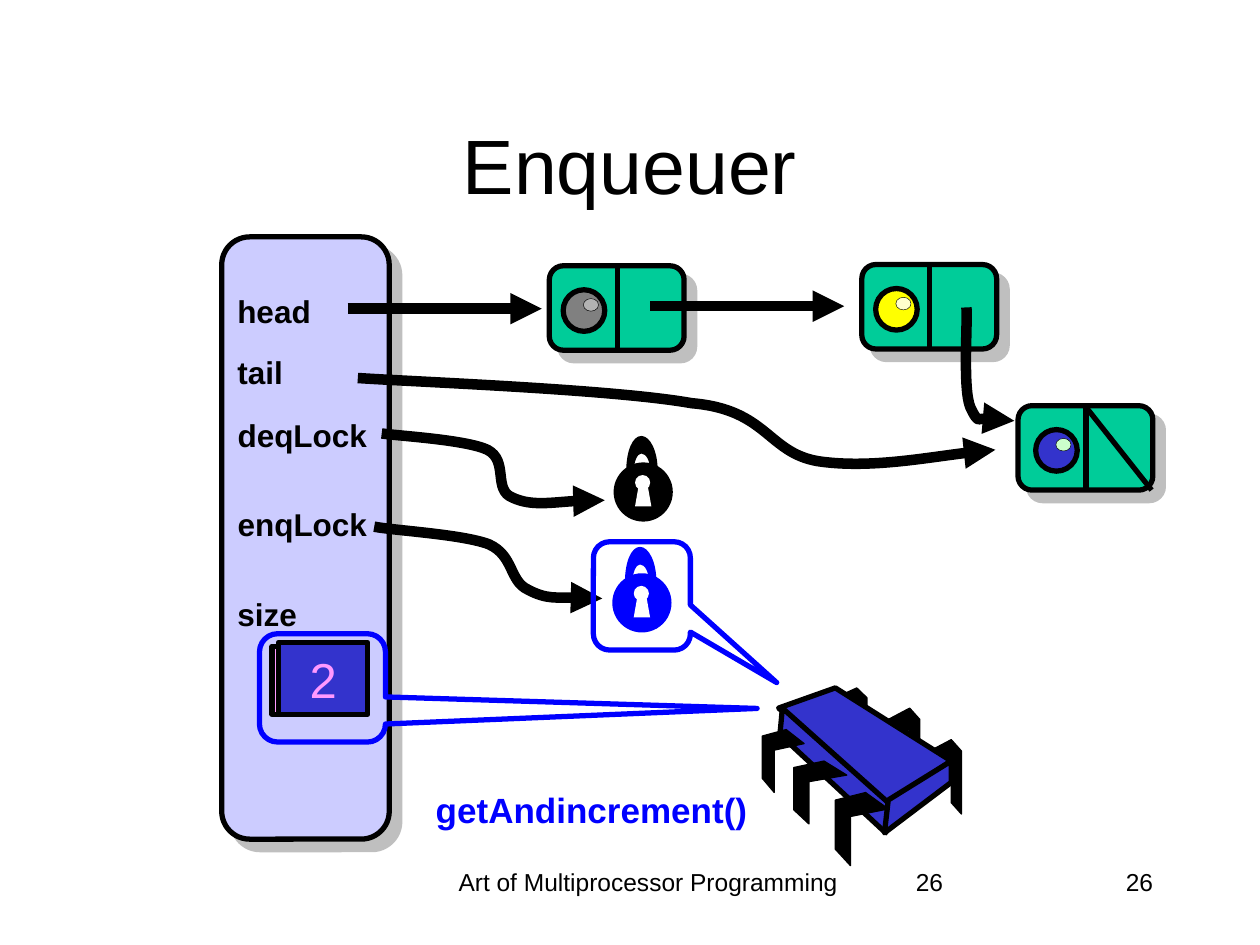
from lxml.etree import SubElement
from pptx import Presentation
from pptx.dml.color import RGBColor
from pptx.enum.shapes import MSO_CONNECTOR as Connector, MSO_SHAPE as Shape
from pptx.enum.text import MSO_ANCHOR as Anchor, PP_ALIGN as Align
from pptx.oxml.ns import qn
from pptx.util import Inches, Pt

BLACK, WHITE, BLUE = "000000", "FFFFFF", "0000FF"
NAVY, GREEN, LILAC, PINK = "3333CC", "00CC99", "CCCCFF", "FF99FF"


def colour(value):
    return RGBColor.from_string(value)


class Sketch:
    """Draws queue-diagram elements on one slide in one style."""

    font = "Arial"
    thin, outline, arrow_width = 0.75, 3, 6

    def __init__(self, page):
        self.page = page
        self.canvas = page.shapes

    def start_group(self):
        self.canvas = self.page.shapes.add_group_shape().shapes

    def end_group(self):
        self.canvas = self.page.shapes

    def paint(self, item, fill, line, width):
        item.shadow.inherit = False
        if fill:
            item.fill.solid()
            item.fill.fore_color.rgb = colour(fill)
        else:
            item.fill.background()
        if line:
            item.line.color.rgb = colour(line)
            item.line.width = Pt(width)
        else:
            item.line.fill.background()

    def drop_shadow(self, item):
        effects = item._element.spPr.find(qn("a:effectLst"))
        shadow = SubElement(effects, qn("a:outerShdw"), dist=str(Pt(8.5)),
                            dir=str(45 * 60000), algn="ctr", rotWithShape="0")
        shade = SubElement(shadow, qn("a:srgbClr"), val="808080")
        SubElement(shade, qn("a:alpha"), val="50000")

    def arrowhead(self, item):
        line = item.line._get_or_add_ln()
        SubElement(line, qn("a:tailEnd"), type="triangle")

    def label(self, item, words, size, ink, bold=False, align=Align.CENTER,
              anchor=Anchor.TOP, wrap=False):
        frame = item.text_frame
        frame.word_wrap = wrap
        frame.vertical_anchor = anchor
        paragraph = frame.paragraphs[0]
        paragraph.text = words
        paragraph.alignment = align
        font = paragraph.font
        font.name, font.size, font.bold = self.font, Pt(size), bold
        font.color.rgb = colour(ink)

    def text(self, words, left, top, width, height, size, ink=BLACK, **style):
        box = self.canvas.add_textbox(*map(Inches, (left, top, width, height)))
        self.label(box, words, size, ink, **style)

    def shape(self, kind, left, top, width, height, fill=None, line=BLACK,
              weight=outline):
        item = self.canvas.add_shape(kind, *map(Inches, (left, top, width, height)))
        self.paint(item, fill, line, weight)
        return item

    def line(self, start, end, width=outline):
        item = self.canvas.add_connector(Connector.STRAIGHT, *map(Inches, start + end))
        item.line.color.rgb = colour(BLACK)
        item.line.width = Pt(width)
        SubElement(item._element.spPr, qn("a:effectLst"))
        return item

    def arrow(self, start, end):
        self.arrowhead(self.line(start, end, self.arrow_width))

    def outline_of(self, start, steps, fill=None, line=None, width=outline,
                   close=True, left=0, top=0):
        """A step of two numbers is a straight line, one of six a Bezier curve."""
        def place(x, y):
            return Inches(left + x), Inches(top + y)

        builder = self.canvas.build_freeform(*place(*start))
        builder.add_line_segments(
            [place(*step[i:i + 2]) for step in steps for i in range(0, len(step), 2)],
            close=close)
        item = builder.convert_to_shape()
        segments = iter(list(item._element.iter(qn("a:lnTo"))))
        for step in steps:
            segment = next(segments)
            if len(step) == 6:
                curve = segment.makeelement(qn("a:cubicBezTo"))
                segment.addprevious(curve)
                for part in (segment, next(segments), next(segments)):
                    curve.append(part[0])
                    part.getparent().remove(part)
        self.paint(item, fill, line, width)
        return item

    def curved_arrow(self, start, *steps):
        self.arrowhead(self.outline_of(start, steps, line=BLACK,
                                       width=self.arrow_width, close=False))

    def panel(self, left, top, width, height, fill):
        self.drop_shadow(self.shape(Shape.ROUNDED_RECTANGLE, left, top,
                                    width, height, fill))

    def node(self, left, top, ball, shine, ball_left=0.11):
        self.start_group()
        self.panel(left, top, 1.07, 0.67, GREEN)
        self.line((left + 0.54, top), (left + 0.54, top + 0.67))
        x, y = left + ball_left, top + 0.19
        self.shape(Shape.OVAL, x, y, 0.33, 0.33, ball)
        self.shape(Shape.OVAL, x + 0.16, y + 0.07, 0.12, 0.1, shine, weight=0.25)
        self.end_group()

    def lock(self, left, top, ink):
        self.start_group()
        self.shape(Shape.OVAL, left, top, 0.47, 0.47, ink, None)
        self.shape(Shape.OVAL, left + 0.17, top + 0.1, 0.12, 0.12, WHITE, None)
        self.outline_of((0.17, 0.35), [(0.2, 0.18), (0.27, 0.18), (0.3, 0.35)],
                        WHITE, left=left, top=top)
        shackle = [(0.16, -0.01, 0.19, -0.07, 0.22, -0.07),
                   (0.26, -0.07, 0.29, -0.01, 0.29, 0.07), (0.35, 0.07),
                   (0.35, -0.09, 0.29, -0.21, 0.22, -0.21),
                   (0.15, -0.21, 0.1, -0.09, 0.1, 0.07)]
        self.outline_of((0.16, 0.07), shackle, ink, left=left, top=top)
        self.end_group()

    def callout(self, left, top, width, height, tip_x, tip_y):
        item = self.shape(Shape.ROUNDED_RECTANGULAR_CALLOUT, left, top,
                          width, height, line=BLUE)
        item._element.spPr.xfrm.set("flipH", "1")
        item.adjustments[0], item.adjustments[1] = tip_x, tip_y

    def pin(self, points, left, top, scale_x, scale_y):
        scaled = [(x * scale_x, y * scale_y) for x, y in points]
        self.outline_of(scaled[0], scaled[1:], BLACK, BLACK, self.thin,
                        left=left, top=top)

    def chip(self):
        back = [(0, 0.09), (0.17, 0), (0.25, 0.09), (0.25, 0.59),
                (0.17, 0.5), (0.17, 0.17), (0, 0.25)]
        front = [(0.24, 0), (0.42, 0.13), (0.12, 0.19), (0.12, 0.58),
                 (0, 0.45), (0, 0.06)]
        faces = [[(6.63, 5.46), (7.55, 6.04), (7.03, 6.39), (6.18, 5.62)],
                 [(6.21, 5.62), (7.05, 6.37), (7.03, 6.61), (6.19, 5.83)],
                 [(7.55, 6.04), (7.55, 6.21), (7.02, 6.61), (7.05, 6.35)]]
        self.start_group()
        for place in [(7.38, 5.87, 1, 1), (7.05, 5.62, 1, 1), (6.63, 5.46, 1, 0.86)]:
            self.pin(back, *place)
        for face in faces:
            self.outline_of(face[0], face[1:], NAVY, BLACK)
        for place in [(6.63, 6.29, 1, 1), (6.3, 6.04, 1, 0.86), (6.05, 5.79, 0.79, 0.86)]:
            self.pin(front, *place)
        self.end_group()


def main():
    deck = Presentation()
    deck.slide_width, deck.slide_height = Inches(10), Inches(7.5)
    sketch = Sketch(deck.slides.add_slide(deck.slide_layouts[6]))

    # Queue object, footer and title
    sketch.panel(1.76, 1.88, 1.33, 4.78, LILAC)
    sketch.text("Art of Multiprocessor Programming", 3.42, 6.83, 3.45, 0.5, 14, wrap=True)
    for align in (Align.LEFT, Align.RIGHT):
        sketch.text("26", 7.17, 6.83, 2.08, 0.5, 14, align=align, wrap=True)
    sketch.text("Enqueuer", 0.75, 0.67, 8.5, 1.25, 44, anchor=Anchor.MIDDLE, wrap=True)

    # Linked nodes
    sketch.arrow((2.76, 2.45), (4.3, 2.45))
    sketch.node(4.36, 2.11, "808080", "B2B2B2")
    sketch.node(6.84, 2.1, "FFFF00", "FFFFCC")
    sketch.arrow((5.16, 2.43), (6.7, 2.43))
    sketch.node(8.08, 3.22, NAVY, "CCFFCC", ball_left=0.14)
    sketch.line((8.61, 3.22), (9.14, 3.89))
    sketch.curved_arrow((7.67, 2.44), (7.68, 2.57, 7.64, 3.08, 7.7, 3.23),
                        (7.77, 3.38, 7.98, 3.32, 8.05, 3.34))

    # Tail and lock pointers
    sketch.curved_arrow((2.84, 3), (3.28, 3.03, 4.88, 3.09, 5.49, 3.2),
                        (6.09, 3.25, 6.09, 3.59, 6.49, 3.66),
                        (6.89, 3.72, 7.61, 3.59, 7.9, 3.57))
    sketch.curved_arrow((3.03, 3.44), (3.17, 3.46, 3.7, 3.49, 3.87, 3.57),
                        (4.04, 3.66, 3.91, 3.89, 4.07, 3.95),
                        (4.22, 4.02, 4.65, 3.96, 4.8, 3.97))
    sketch.curved_arrow((2.97, 4.18), (3.12, 4.21, 3.67, 4.24, 3.88, 4.32),
                        (4.08, 4.41, 4.04, 4.61, 4.19, 4.68),
                        (4.34, 4.76, 4.65, 4.74, 4.78, 4.75))
    sketch.lock(4.87, 3.67, BLACK)

    # Size counter
    sketch.shape(Shape.RECTANGLE, 2.16, 5.13, 0.74, 0.54, PINK)
    counter = sketch.shape(Shape.RECTANGLE, 2.21, 5.1, 0.71, 0.57, NAVY)
    sketch.label(counter, "2", 28, PINK, anchor=Anchor.MIDDLE)

    # Enqueuing thread and what it holds
    sketch.callout(2.06, 5.03, 1, 0.86, -3.45, 0.19)
    sketch.text("getAndincrement()", 3.35, 6.21, 2.69, 0.44, 20, BLUE, bold=True)
    sketch.callout(4.71, 4.3, 0.77, 0.86, -1.39, 0.8)
    sketch.chip()
    sketch.lock(4.86, 4.55, BLUE)

    # Field names
    for name, top, width in [("head", 2.27, 0.79), ("tail", 2.75, 0.57),
                             ("deqLock", 3.25, 1.24), ("enqLock", 3.96, 1.24),
                             ("size", 4.67, 0.68)]:
        sketch.text(name, 1.78, top, width, 0.4, 18, bold=True)

    deck.save("out.pptx")


if __name__ == "__main__":
    main()
